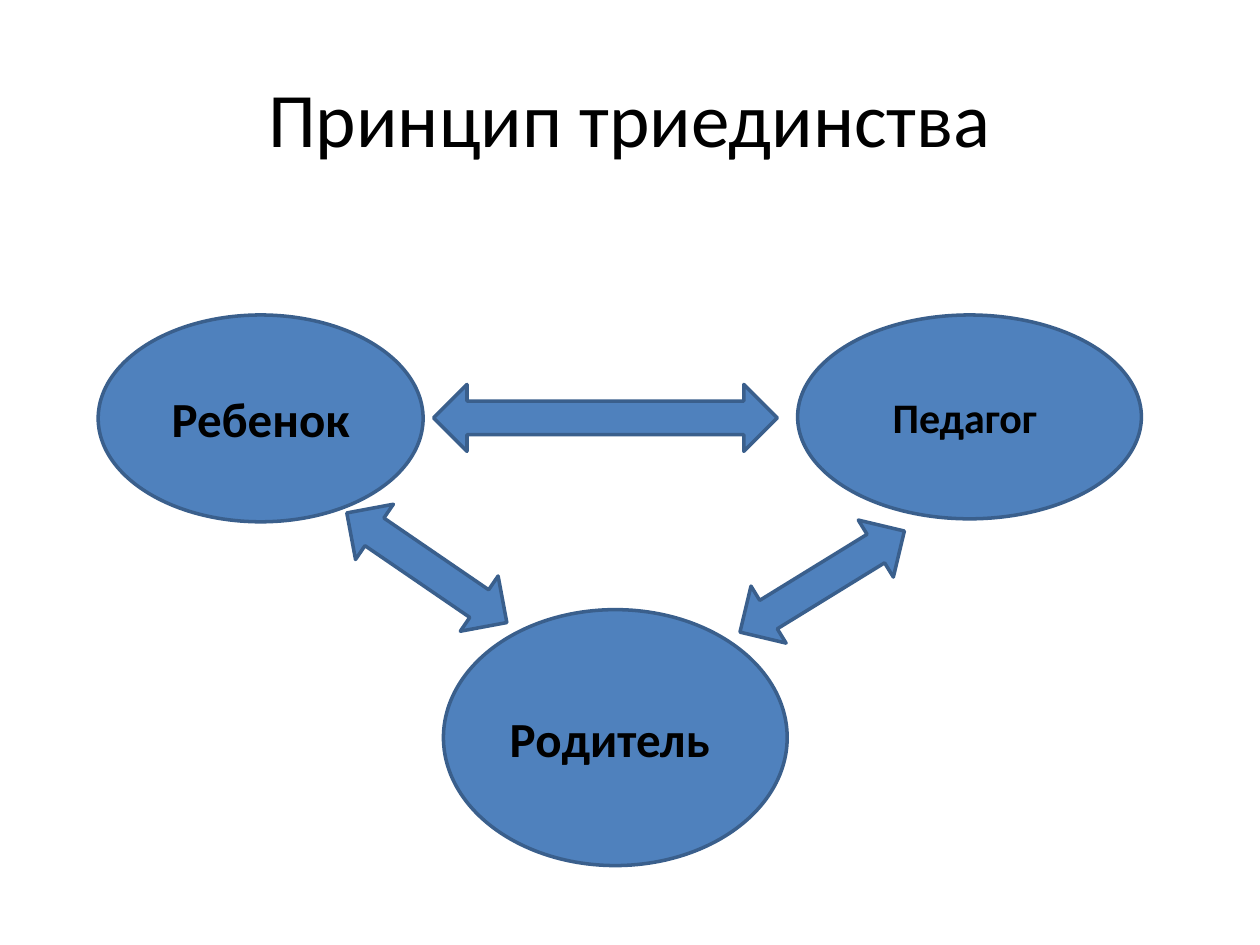
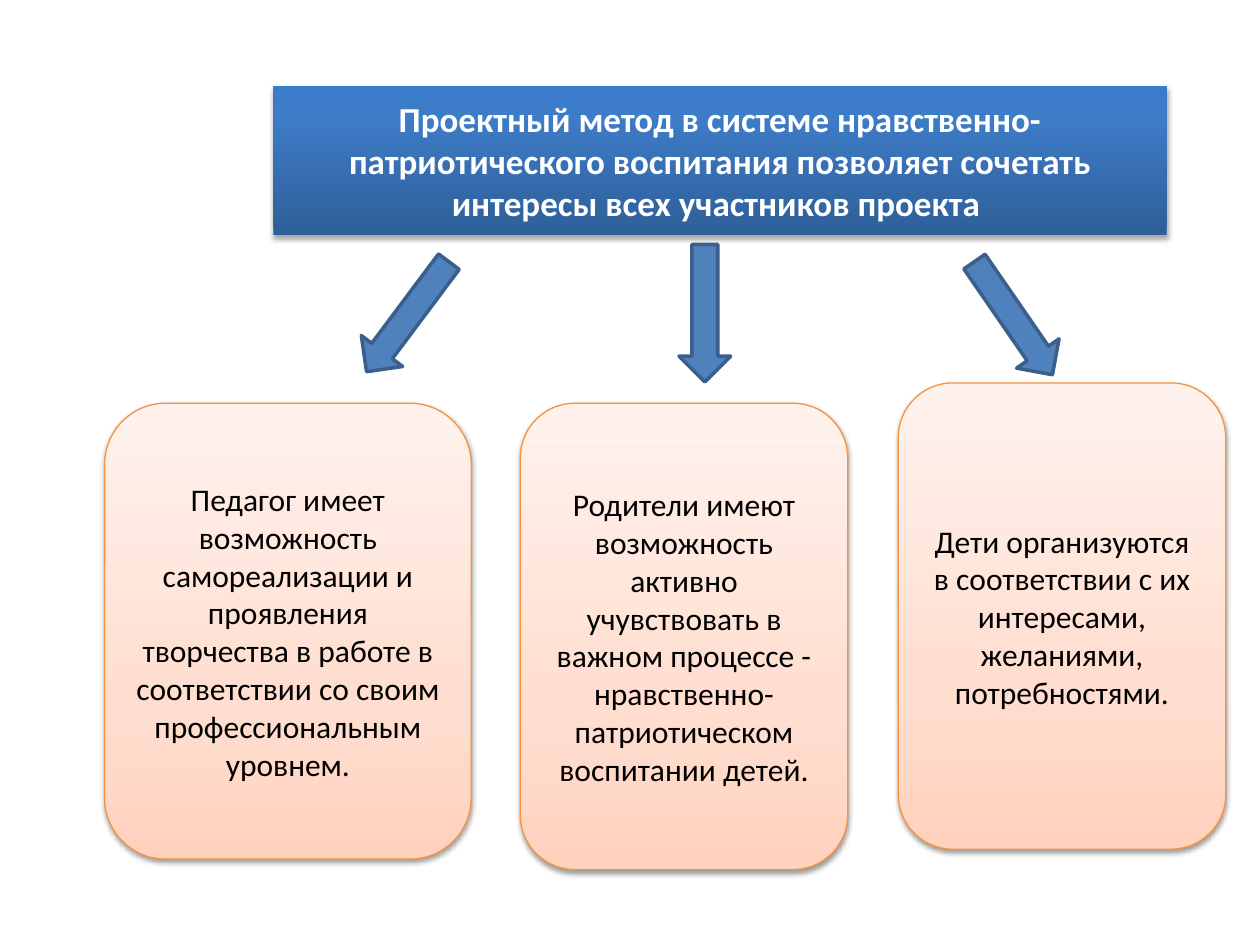
from copy import deepcopy
from dataclasses import dataclass
from typing import Optional

from lxml.etree import SubElement
from pptx import Presentation
from pptx.dml.color import RGBColor as RGB
from pptx.enum.shapes import MSO_SHAPE as Kind
from pptx.enum.text import MSO_ANCHOR as Anchor, PP_ALIGN as Align
from pptx.oxml.ns import qn
from pptx.util import Cm, Pt


@dataclass(frozen=True)
class Theme:
    font: str = "Calibri"
    black: str = "000000"
    white: str = "FFFFFF"
    blue: str = "4F81BD"
    edge: str = "3A5F8C"
    orange: str = "F69240"
    navy: tuple = ((0, "2F5F99"), (0.8, "3D7CC7"), (1, "3A7CCB"))
    peach: tuple = ((0, "FFD2BD"), (0.35, "FFDED0"), (1, "FFF2ED"))
    title: int = 44
    large: int = 28
    medium: int = 24
    head: int = 20
    body: int = 18
    thick: float = 2
    thin: float = 0.75


@dataclass(frozen=True)
class Shadow:
    alpha: int
    dist: float
    blur: float = 3.1


@dataclass(frozen=True)
class Look:
    kind: Kind
    fill: str | tuple
    line: Optional[str] = None
    width: float = 0
    color: str = "000000"
    bold: bool = False
    shadow: Optional[Shadow] = None


@dataclass(frozen=True)
class Item:
    """A shape, with its place in centimetres."""
    look: Look
    left: float
    top: float
    width: float
    height: float
    text: str = ""
    size: int = 0
    turn: float = 0


T = Theme()
OVAL = Look(Kind.OVAL, T.blue, T.edge, T.thick, T.black, True)
LINK = Look(Kind.LEFT_RIGHT_ARROW, T.blue, T.edge, T.thick)
DOWN = Look(Kind.DOWN_ARROW, T.blue, T.edge, T.thick)
HEAD = Look(Kind.RECTANGLE, T.navy, None, 0, T.white, True, Shadow(35, 1.8))
CARD = Look(Kind.ROUNDED_RECTANGLE, T.peach, T.orange, T.thin, T.black,
            False, Shadow(38, 1.6))

TRIAD = [
    Item(OVAL, 1.98, 6.35, 6.55, 4.17, "Ребенок", T.large),
    Item(OVAL, 8.94, 12.29, 6.93, 5.16, "Родитель ", T.large),
    Item(OVAL, 16.08, 6.35, 6.93, 4.11, "Педагог ", T.medium),
    Item(LINK, 8.74, 7.75, 6.93, 1.35),
    Item(LINK, 6.65, 10.77, 3.91, 1.35, turn=34.4),
    Item(LINK, 14.63, 11.05, 3.89, 1.35, turn=328.4),
]

PROJECT = [
    Item(HEAD, 5.51, 1.73, 18.01, 3,
         "Проектный метод в системе нравственно-патриотического воспитания "
         "позволяет сочетать интересы всех участников проекта ", T.head),
    Item(CARD, 2.11, 8.13, 7.39, 9.19,
         "Педагог имеет возможность самореализации и проявления творчества "
         "в работе в соответствии со своим профессиональным уровнем.", T.body),
    Item(CARD, 10.49, 8.13, 6.6, 9.4,
         "Родители имеют возможность активно учувствовать в важном процессе - "
         "нравственно-патриотическом воспитании детей.", T.body),
    Item(CARD, 18.11, 7.72, 6.6, 9.4,
         "Дети организуются в соответствии с их интересами, желаниями, "
         "потребностями.", T.body),
    Item(DOWN, 7.7, 5, 1.04, 2.77, turn=36.8),
    Item(DOWN, 13.69, 4.93, 1.04, 2.77),
    Item(DOWN, 19.91, 5.03, 1.04, 2.77, turn=325.4),
]


def write(shape, text: str, size: int, color: str, bold: bool) -> None:
    frame = shape.text_frame
    frame.word_wrap = True
    frame.vertical_anchor = Anchor.MIDDLE
    par = frame.paragraphs[0]
    par.text = text
    par.alignment = Align.CENTER
    font = par.font
    font.name, font.size, font.bold = T.font, Pt(size), bold
    font.color.rgb = RGB.from_string(color)


def blend(shape, stops: tuple) -> None:
    """Fill with a gradient that runs from bottom to top."""
    fill = shape.fill
    fill.gradient()
    fill.gradient_angle = 90
    group = shape._element.spPr.find(qn("a:gradFill")).find(qn("a:gsLst"))
    while len(group) < len(stops):
        group.append(deepcopy(group[0]))
    for stop, (place, color) in zip(fill.gradient_stops, stops):
        stop.position = place
        stop.color.rgb = RGB.from_string(color)


def shade(shape, shadow: Shadow) -> None:
    """Add a soft shadow that falls straight down."""
    group = shape._element.spPr.find(qn("a:effectLst"))
    outer = SubElement(group, qn("a:outerShdw"), blurRad=str(Pt(shadow.blur)),
                       dist=str(Pt(shadow.dist)), dir="5400000",
                       rotWithShape="0")
    color = SubElement(outer, qn("a:srgbClr"), val=T.black)
    SubElement(color, qn("a:alpha"), val=str(shadow.alpha * 1000))


def draw(slide, item: Item) -> None:
    look = item.look
    box = map(Cm, (item.left, item.top, item.width, item.height))
    shape = slide.shapes.add_shape(look.kind, *box)
    shape.rotation = item.turn
    shape.shadow.inherit = False
    if isinstance(look.fill, tuple):
        blend(shape, look.fill)
    else:
        shape.fill.solid()
        shape.fill.fore_color.rgb = RGB.from_string(look.fill)
    if look.line:
        shape.line.color.rgb = RGB.from_string(look.line)
        shape.line.width = Pt(look.width)
    else:
        shape.line.fill.background()
    if look.shadow:
        shade(shape, look.shadow)
    if item.text:
        write(shape, item.text, item.size, look.color, look.bold)


def main() -> None:
    deck = Presentation()
    deck.slide_width, deck.slide_height = Cm(25.4), Cm(19.05)
    titled, blank = deck.slide_layouts[5], deck.slide_layouts[6]

    triad = deck.slides.add_slide(titled)
    title = triad.shapes.title
    title.left, title.top, title.width, title.height = map(
        Cm, (1.27, 0.76, 22.86, 3.18))
    write(title, "Принцип триединства", T.title, T.black, False)

    project = deck.slides.add_slide(blank)
    for slide, items in ((triad, TRIAD), (project, PROJECT)):
        for item in items:
            draw(slide, item)
    deck.save("out.pptx")


if __name__ == "__main__":
    main()
